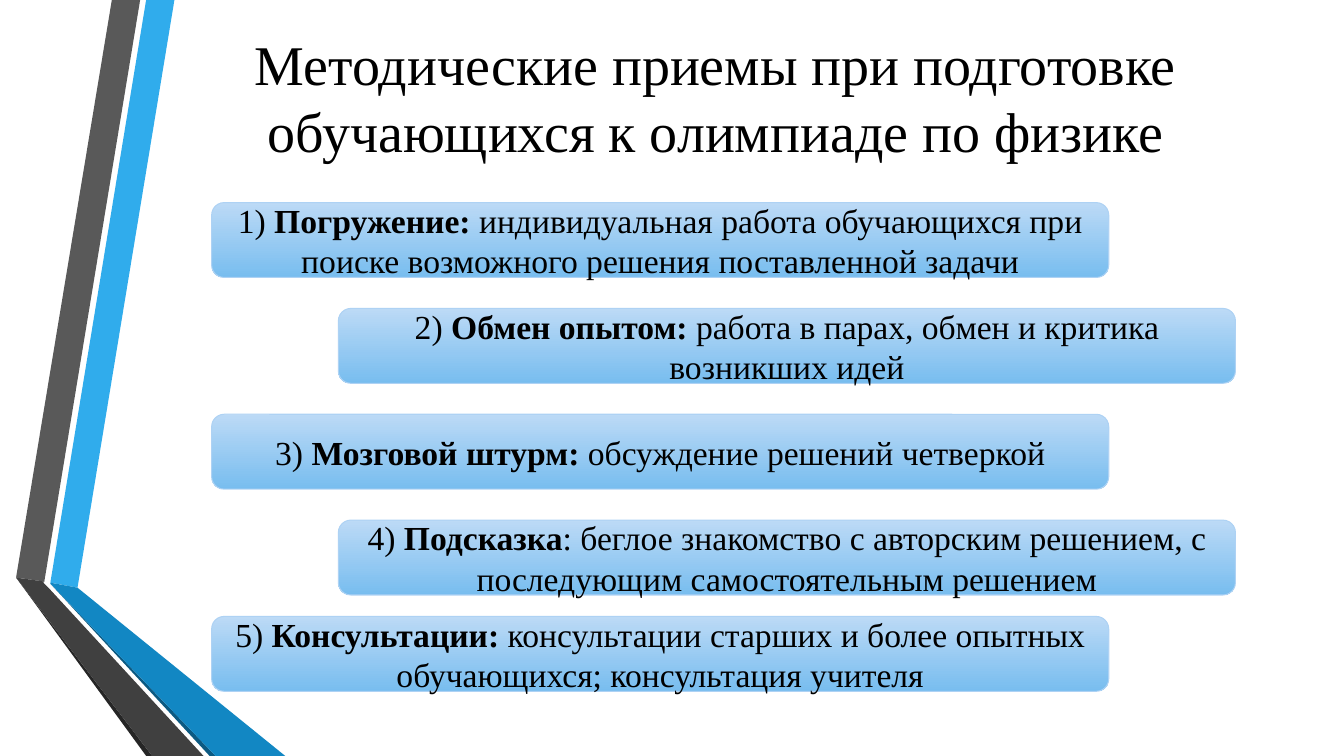
"""Build a slide on five teaching methods for preparing students for a physics olympiad."""
from dataclasses import dataclass

from pptx import Presentation
from pptx.dml.color import RGBColor
from pptx.enum.shapes import MSO_SHAPE
from pptx.enum.text import MSO_ANCHOR, PP_ALIGN
from pptx.util import Pt


@dataclass(frozen=True)
class Theme:
    font: str = "Times New Roman"
    title_size: int = 40
    method_size: int = 24
    text: str = "000000"
    gradient: tuple = ("BCDAF6", "78BDEF")
    outline: str = "AED2F4"
    blue: str = "30ACEC"
    blue_shade: str = "0C5A82"
    blue_fold: str = "1287C3"
    gray: str = "595959"
    gray_shade: str = "262626"
    gray_fold: str = "404040"


theme = Theme()


def set_values(target, values):
    for name, value in values.items():
        setattr(target, name, value)


def write_text(shape, pieces, size):
    set_values(shape.text_frame, {"word_wrap": True, "vertical_anchor": MSO_ANCHOR.MIDDLE})
    para = shape.text_frame.paragraphs[0]
    para.alignment = PP_ALIGN.CENTER
    for text, bold in pieces:
        span = para.add_run()
        span.text = text
        set_values(span.font, {"name": theme.font, "size": Pt(size), "bold": bold})
        span.font.color.rgb = RGBColor.from_string(theme.text)


deck = Presentation()
set_values(deck, {"slide_width": Pt(960), "slide_height": Pt(540)})
page = deck.slides.add_slide(deck.slide_layouts[6])

ribbons = [
    (theme.blue, [(36, 416.2), (55.4, 419.8), (124.6, 0), (104.4, 0)]),
    (theme.gray, [(100.1, 0), (79.9, 0), (11.5, 412.6), (31.7, 415.4)]),
    (theme.gray_shade, [(11.5, 412.6), (104.4, 540), (108.7, 540)]),
    (theme.blue_shade, [(36, 416.9), (149.8, 540), (154.1, 540)]),
    (theme.blue_fold, [(36, 416.9), (154.1, 540), (203.8, 540), (55.4, 419.8), (36, 416.2)]),
    (theme.gray_fold, [(145.4, 540), (34.6, 419.8), (31, 416.2), (31.7, 415.4),
                       (11.5, 412.6), (108.7, 540)]),
]
for color, corners in ribbons:
    points = [(Pt(x), Pt(y)) for x, y in corners]
    builder = page.shapes.build_freeform(*points[0])
    builder.add_line_segments(points[1:], close=True)
    ribbon = builder.convert_to_shape()
    ribbon.shadow.inherit = False
    ribbon.fill.solid()
    ribbon.fill.fore_color.rgb = RGBColor.from_string(color)
    ribbon.line.fill.background()

title = page.shapes.add_textbox(Pt(116.6), Pt(0), Pt(789.1), Pt(138.2))
write_text(title, [("Методические приемы при подготовке обучающихся к олимпиаде по физике", False)],
           theme.title_size)

methods = [
    (144.7, "Погружение:",
     " индивидуальная работа обучающихся при поиске возможного решения поставленной задачи"),
    (220.3, "Обмен опытом:", " работа в парах, обмен и критика возникших идей"),
    (295.9, "Мозговой штурм: ", "обсуждение решений четверкой"),
    (371.5, "Подсказка",
     ": беглое знакомство с авторским решением, с последующим самостоятельным решением"),
    (440.3, "Консультации: ",
     "консультации старших и более опытных обучающихся; консультация учителя"),
]
for number, (top, name, detail) in enumerate(methods, start=1):
    left = 151.2 if number % 2 else 241.7
    box = page.shapes.add_shape(MSO_SHAPE.ROUNDED_RECTANGLE, Pt(left), Pt(top), Pt(640.8), Pt(53.5))
    box.shadow.inherit = False
    box.fill.gradient()
    box.fill.gradient_angle = 270
    for stop, color, position in zip(box.fill.gradient_stops, theme.gradient, (0, 1)):
        stop.color.rgb = RGBColor.from_string(color)
        stop.position = position
    box.line.color.rgb = RGBColor.from_string(theme.outline)
    box.line.width = Pt(0.75)
    write_text(box, [(f"{number}) ", False), (name, True), (detail, False)], theme.method_size)

deck.save("out.pptx")
